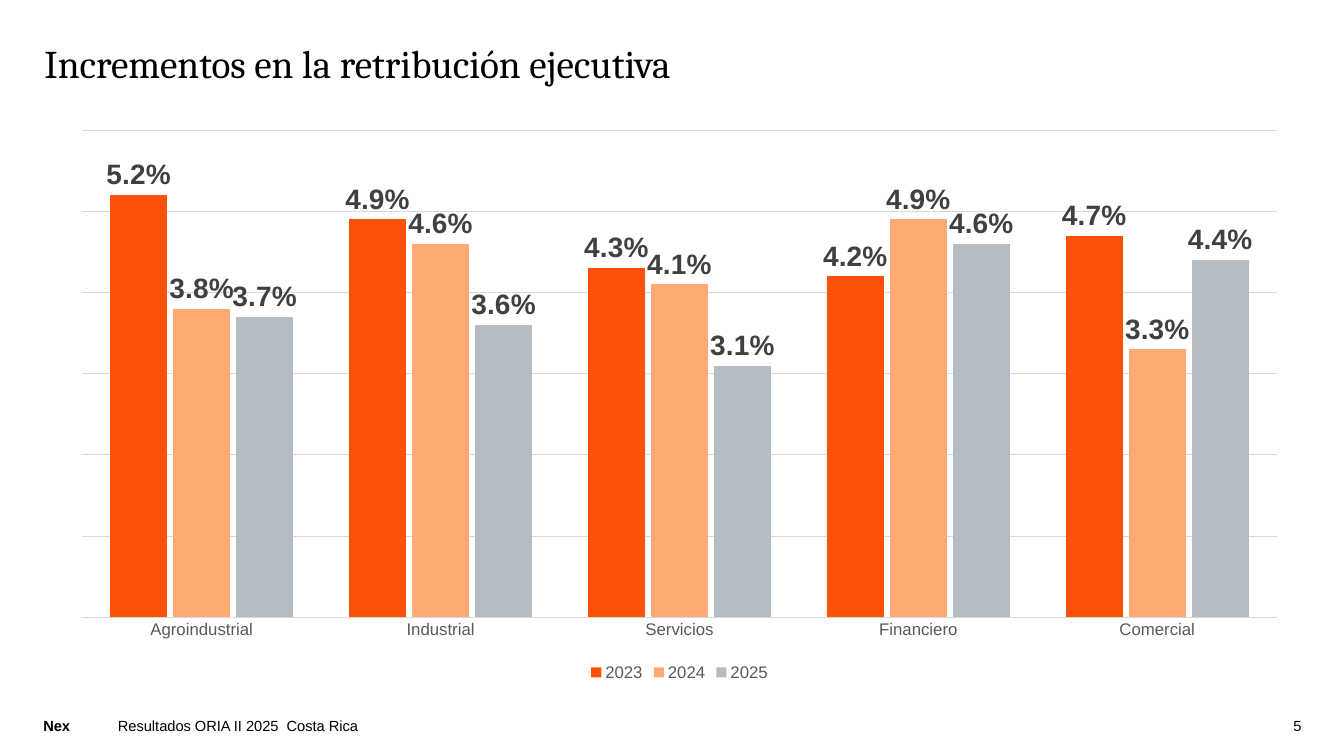
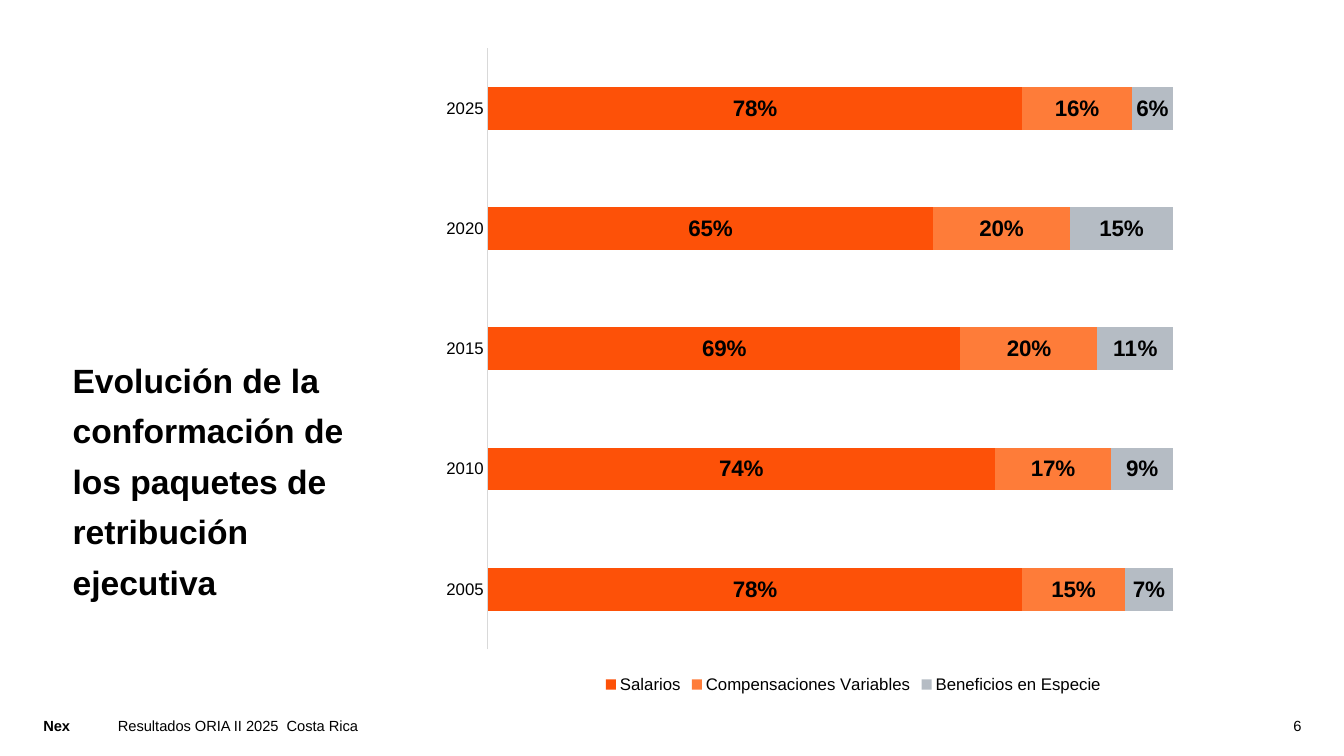
from dataclasses import dataclass

from lxml import etree
from pptx import Presentation
from pptx.chart.data import CategoryChartData
from pptx.dml.color import RGBColor
from pptx.enum.chart import XL_CHART_TYPE, XL_LABEL_POSITION, XL_LEGEND_POSITION, XL_TICK_MARK
from pptx.enum.text import MSO_ANCHOR, MSO_AUTO_SIZE, PP_ALIGN
from pptx.oxml.ns import qn
from pptx.util import Inches, Pt

COLUMNS, STACKED_BARS = XL_CHART_TYPE.COLUMN_CLUSTERED, XL_CHART_TYPE.BAR_STACKED
OUTSIDE, CENTER = XL_LABEL_POSITION.OUTSIDE_END, XL_LABEL_POSITION.CENTER
LEGEND_BOTTOM, NO_TICK = XL_LEGEND_POSITION.BOTTOM, XL_TICK_MARK.NONE
TOP, BOTTOM = MSO_ANCHOR.TOP, MSO_ANCHOR.BOTTOM
LEFT, RIGHT = PP_ALIGN.LEFT, PP_ALIGN.RIGHT
NO_FIT = MSO_AUTO_SIZE.NONE


@dataclass(frozen=True)
class Theme:
    text: str = "000000"
    axis_gray: str = "595959"
    label_gray: str = "404040"
    line: str = "D9D9D9"
    orange: str = "FD5108"
    mid_orange: str = "FE7C39"
    light_orange: str = "FFAA72"
    gray: str = "B5BCC4"
    body_font: str = "Arial"
    title_font: str = "Cambria"
    footer_size: float = 10.5
    axis_size: float = 12
    line_width: float = 0.75


T = Theme()

# Content
FIRST_PAGE = 5
FOOTER_TOP, FOOTER_HEIGHT = 7.11, 0.18
BRAND = "Nex"
FOOTER = "Resultados ORIA II 2025  Costa Rica"

SLIDES = [
    {
        "title": "Incrementos en la retribución ejecutiva",
        "title_box": (0.44, 0.44, 12.47, 1),
        "title_font": {"size": 28, "name": T.title_font},
        "title_paragraph": {"line_spacing": 0.9},
        "chart": {
            "type": COLUMNS, "box": (0.57, 1.18, 12.34, 5.62),
            "plot_area": (0.02, 0.02, 0.96, 0.86),
            "categories": ["Agroindustrial", "Industrial", "Servicios",
                           "Financiero", "Comercial"],
            "series": [
                ("2023", T.orange, (0.052, 0.049, 0.043, 0.042, 0.047)),
                ("2024", T.light_orange, (0.038, 0.046, 0.041, 0.049, 0.033)),
                ("2025", T.gray, (0.037, 0.036, 0.031, 0.046, 0.044)),
            ],
            "plot": {"gap_width": 97, "overlap": -10},
            "scale": {"minimum_scale": 0, "maximum_scale": 0.06, "major_unit": 0.01,
                      "has_major_gridlines": True},
            "axis_color": T.axis_gray, "format": "0.0%", "label_position": OUTSIDE,
            "label_font": {"size": 20, "bold": True, "color": T.label_gray},
        },
    },
    {
        "title": "Evolución de la conformación de los paquetes de retribución ejecutiva",
        "title_box": (0.72, 3.47, 2.8, 2.47),
        "title_font": {"size": 24, "bold": True},
        "title_paragraph": {"line_spacing": 1.25, "space_after": Pt(10)},
        "chart": {
            "type": STACKED_BARS, "box": (3.73, 0.3, 9.47, 6.62),
            "plot_area": (0.117, 0.027, 0.861, 0.901),
            "categories": ["2005", "2010", "2015", "2020", "2025"],
            "series": [
                ("Salarios", T.orange, (0.78, 0.74, 0.69, 0.65, 0.78)),
                ("Compensaciones Variables", T.mid_orange, (0.15, 0.17, 0.2, 0.2, 0.16)),
                ("Beneficios en Especie", T.gray, (0.07, 0.09, 0.11, 0.15, 0.06)),
            ],
            "plot": {"gap_width": 182, "overlap": 100},
            "scale": {"minimum_scale": 0, "maximum_scale": 1.2,
                      "has_major_gridlines": False},
            "axis_color": T.text, "format": "0%", "label_position": CENTER,
            "label_font": {"size": 16, "bold": True, "color": T.text},
        },
    },
]


# Formatting helpers
def set_all(target, values):
    for name, value in values.items():
        setattr(target, name, value)


def style_font(font, size, color=T.text, name=T.body_font, bold=False):
    set_all(font, {"size": Pt(size), "name": name, "bold": bold})
    font.color.rgb = RGBColor.from_string(color)


def style_line(line):
    line.color.rgb = RGBColor.from_string(T.line)
    line.width = Pt(T.line_width)


def fill_text(sp, text, font, anchor=TOP, paragraph=None):
    tf = sp.text_frame
    set_all(tf, {"word_wrap": True, "auto_size": NO_FIT, "vertical_anchor": anchor,
                 "margin_left": 0, "margin_right": 0, "margin_top": 0, "margin_bottom": 0})
    p = tf.paragraphs[0]
    set_all(p, {"alignment": LEFT, **(paragraph or {})})
    r = p.add_run()
    r.text = text
    style_font(r.font, **font)


# Slide parts
def add_title(s, slide):
    sp = s.shapes.title
    names = ("left", "top", "width", "height")
    set_all(sp, dict(zip(names, map(Inches, slide["title_box"]))))
    fill_text(sp, slide["title"], slide["title_font"], paragraph=slide["title_paragraph"])


def add_footer(s, page):
    for text, left, width, anchor, align, bold in (
        (BRAND, 0.43, 0.47, TOP, LEFT, True),
        (FOOTER, 1.17, 9.64, BOTTOM, LEFT, False),
        (str(page), 12.58, 0.33, BOTTOM, RIGHT, False),
    ):
        sp = s.shapes.add_textbox(*map(Inches, (left, FOOTER_TOP, width, FOOTER_HEIGHT)))
        fill_text(sp, text, {"size": T.footer_size, "bold": bold}, anchor,
                  {"alignment": align})


def place_plot_area(chart, fractions):
    plot_area = chart._chartSpace.chart.plotArea
    for old in plot_area.findall(qn("c:layout")):
        plot_area.remove(old)
    layout = etree.Element(qn("c:layout"))
    manual = etree.SubElement(layout, qn("c:manualLayout"))
    entries = [("layoutTarget", "inner"), ("xMode", "edge"), ("yMode", "edge"),
               *zip("xywh", fractions)]
    for tag, value in entries:
        etree.SubElement(manual, qn(f"c:{tag}")).set("val", str(value))
    plot_area.insert(0, layout)


def add_percent_chart(s, c):
    data = CategoryChartData(number_format=c["format"])
    data.categories = c["categories"]
    for name, _, values in c["series"]:
        data.add_series(name, values)
    chart = s.shapes.add_chart(c["type"], *map(Inches, c["box"]), data).chart
    style_font(chart.font, 10)
    set_all(chart, {"has_title": False, "has_legend": True})
    set_all(chart.legend, {"position": LEGEND_BOTTOM, "include_in_layout": False})
    style_font(chart.legend.font, T.axis_size, c["axis_color"])
    place_plot_area(chart, c["plot_area"])

    # Axes
    axis = chart.category_axis
    set_all(axis, {"major_tick_mark": NO_TICK, "has_major_gridlines": False})
    style_font(axis.tick_labels.font, T.axis_size, c["axis_color"])
    style_line(axis.format.line)
    values_axis = chart.value_axis
    set_all(values_axis, {**c["scale"], "visible": False})
    if values_axis.has_major_gridlines:
        style_line(values_axis.major_gridlines.format.line)

    # Bars and their labels
    plot = chart.plots[0]
    set_all(plot, {**c["plot"], "vary_by_categories": False})
    for series, (_, color, _) in zip(plot.series, c["series"]):
        series.format.fill.solid()
        series.format.fill.fore_color.rgb = RGBColor.from_string(color)
        series.invert_if_negative = False
        labels = series.data_labels
        set_all(labels, {"show_value": True, "number_format": c["format"],
                         "number_format_is_linked": False,
                         "position": c["label_position"]})
        style_font(labels.font, **c["label_font"])


def main():
    prs = Presentation()
    set_all(prs, {"slide_width": Inches(13.33), "slide_height": Inches(7.5)})
    title_only = prs.slide_layouts[5]
    for page, slide in enumerate(SLIDES, FIRST_PAGE):
        s = prs.slides.add_slide(title_only)
        add_title(s, slide)
        add_footer(s, page)
        add_percent_chart(s, slide["chart"])
    prs.save("out.pptx")


if __name__ == "__main__":
    main()
